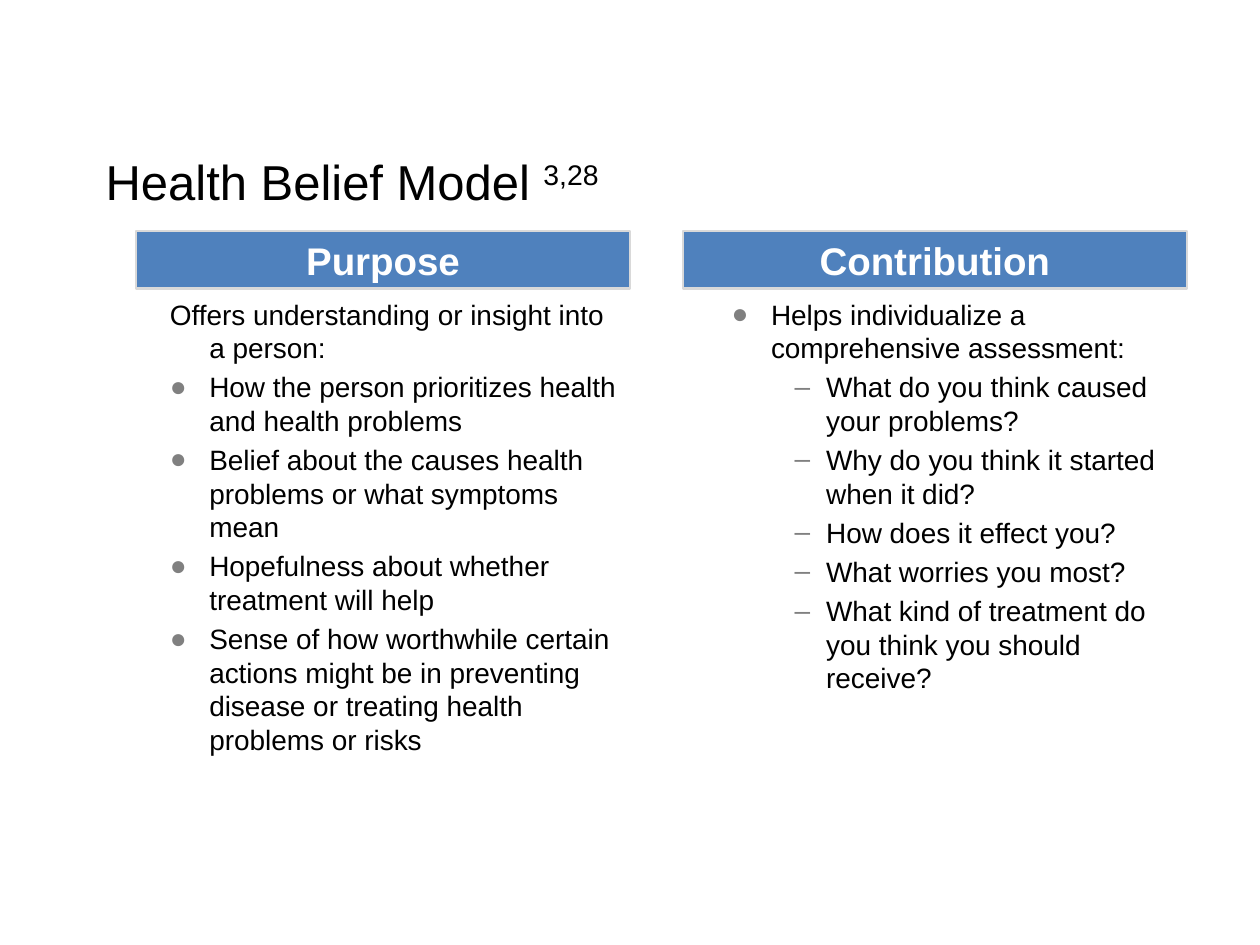
from lxml import etree
from pptx import Presentation
from pptx.dml.color import RGBColor
from pptx.enum import shapes, text
from pptx.oxml import ns
from pptx.util import Pt

BLACK = RGBColor(0x00, 0x00, 0x00)
WHITE = RGBColor(0xFF, 0xFF, 0xFF)
BLUE = RGBColor(0x4F, 0x81, 0xBD)
LIGHT_GRAY = RGBColor(0xD9, 0xD9, 0xD9)
BULLET_GRAY = RGBColor(0x80, 0x80, 0x80)
FONT = "Arial"

TITLE, CITATIONS = "Health Belief Model ", "3,28"

COLUMNS = [
    {
        "heading": "Purpose", "heading_left": 77.75, "heading_width": 282.25, "body_left": 54,
        "points": [
            (1, "", "Offers understanding or insight into a person:"),
            (1, "●", "How the person prioritizes health and health problems"),
            (1, "●", "Belief about the causes health problems or what symptoms mean"),
            (1, "●", "Hopefulness about whether treatment will help"),
            (1, "●", "Sense of how worthwhile certain actions might be in preventing "
                     "disease or treating health problems or risks"),
        ],
    },
    {
        "heading": "Contribution", "heading_left": 390.25, "heading_width": 288, "body_left": 375,
        "points": [
            (1, "●", "Helps individualize a comprehensive assessment:"),
            (2, "–", "What do you think caused your problems?"),
            (2, "–", "Why do you think it started when it did?"),
            (2, "–", "How does it effect you?"),
            (2, "–", "What worries you most?"),
            (2, "–", "What kind of treatment do you think you should receive?"),
        ],
    },
]
HEADING_TOP, HEADING_HEIGHT = 132, 33
BODY_TOP, BODY_WIDTH, BODY_HEIGHT = 166.25, 309, 282
INDENTS = {1: (58.5, -22.5), 2: (90, -18)}
POINT_GAP = 3.2


def set_font(paragraph, size, color, bold=False):
    font = paragraph.font
    font.name, font.size, font.bold = FONT, Pt(size), bold
    font.color.rgb = color


def set_bullet(paragraph, level, bullet):
    paragraph.level = level
    margin, indent = INDENTS[level]
    props = paragraph._p.get_or_add_pPr()
    props.set("marL", str(Pt(margin)))
    props.set("indent", str(Pt(indent)))
    if not bullet:
        etree.SubElement(props, ns.qn("a:buNone"))
        return
    color = etree.SubElement(props, ns.qn("a:buClr"))
    etree.SubElement(color, ns.qn("a:srgbClr"), val=str(BULLET_GRAY))
    etree.SubElement(props, ns.qn("a:buFont"), typeface=FONT)
    etree.SubElement(props, ns.qn("a:buChar"), char=bullet)


def add_frame(slide, left, top, width, height):
    frame = slide.shapes.add_textbox(Pt(left), Pt(top), Pt(width), Pt(height)).text_frame
    frame.word_wrap = True
    return frame


def add_title(slide):
    title = add_frame(slide, 53.25, 82.75, 630, 66.25).paragraphs[0]
    title.add_run().text = TITLE
    citations = title.add_run()
    citations.text = CITATIONS
    citations.font._element.set("baseline", "30000")
    set_font(title, 28, BLACK)


def add_heading(slide, column):
    heading = slide.shapes.add_shape(
        shapes.MSO_SHAPE.RECTANGLE, Pt(column["heading_left"]), Pt(HEADING_TOP),
        Pt(column["heading_width"]), Pt(HEADING_HEIGHT))
    heading.shadow.inherit = False
    heading.fill.solid()
    heading.fill.fore_color.rgb = BLUE
    heading.line.color.rgb = LIGHT_GRAY
    heading.line.width = Pt(1.5)
    heading.text_frame.vertical_anchor = text.MSO_ANCHOR.MIDDLE
    label = heading.text_frame.paragraphs[0]
    label.text = column["heading"]
    label.alignment = text.PP_ALIGN.CENTER
    set_font(label, 22, WHITE, bold=True)


def add_points(slide, column):
    body = add_frame(slide, column["body_left"], BODY_TOP, BODY_WIDTH, BODY_HEIGHT)
    for index, (level, bullet, wording) in enumerate(column["points"]):
        point = body.add_paragraph() if index else body.paragraphs[0]
        point.text = wording
        set_bullet(point, level, bullet)
        if index:
            point.space_before = Pt(POINT_GAP)
        set_font(point, 16, BLACK)


def main():
    deck = Presentation()
    deck.slide_width, deck.slide_height = Pt(720), Pt(540)
    slide = deck.slides.add_slide(deck.slide_layouts[6])
    add_title(slide)
    for column in COLUMNS:
        add_heading(slide, column)
        add_points(slide, column)
    deck.save("out.pptx")


if __name__ == "__main__":
    main()
